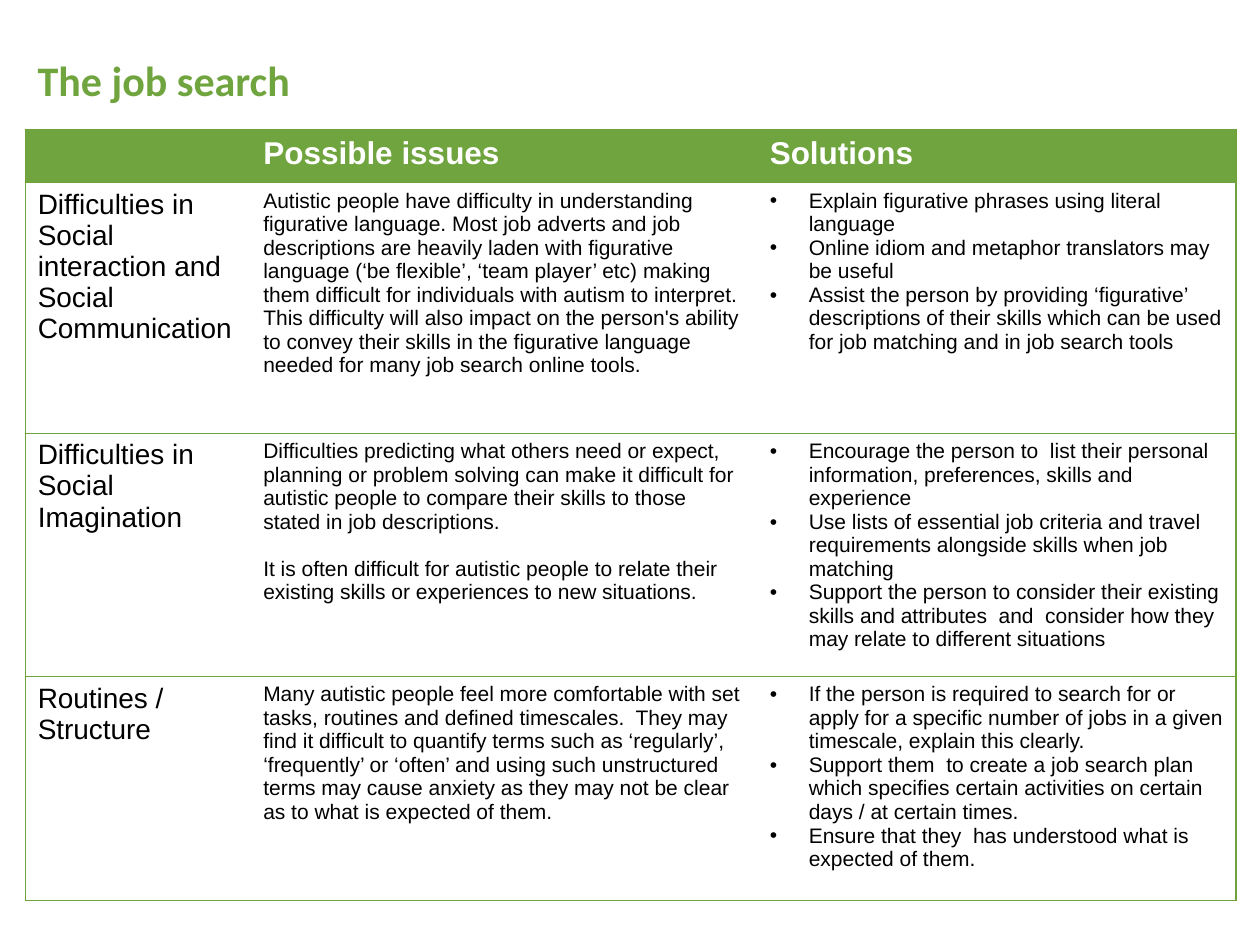
from lxml import etree
from pptx import Presentation
from pptx.dml.color import RGBColor
from pptx.enum import text
from pptx.oxml import ns
from pptx.util import Inches, Pt

GREEN = RGBColor(0x70, 0xA4, 0x3E)
EDGE = RGBColor(0x6E, 0xA2, 0x3A)
WHITE = RGBColor(0xFF, 0xFF, 0xFF)
BLACK = RGBColor(0, 0, 0)

COLS = [1.79, 4.02, 3.8]
ROWS = [0.42, 1.99, 1.93, 1.78]
HEADS = ["", "Possible issues", "Solutions"]

# One entry per row: topic, issues, solutions
TOPICS = [
    ("Difficulties in Social interaction and Social Communication",
     ["Autistic people have difficulty in understanding figurative language. "
      "Most job adverts and job descriptions are heavily laden with figurative "
      "language (‘be flexible’, ‘team player’ etc) making them difficult for "
      "individuals with autism to interpret.  This difficulty will also impact "
      "on the person's ability to convey their skills in the figurative "
      "language needed for many job search online tools."],
     ["Explain figurative phrases using literal language",
      "Online idiom and metaphor translators may be useful",
      "Assist the person by providing ‘figurative’ descriptions of their "
      "skills which can be used for job matching and in job search tools"]),
    ("Difficulties in Social Imagination",
     ["Difficulties predicting what others need or expect, planning or problem "
      "solving can make it difficult for autistic people to compare their "
      "skills to those stated in job descriptions.",
      "It is often difficult for autistic people to relate their existing "
      "skills or experiences to new situations."],
     ["Encourage the person to  list their personal information, preferences, "
      "skills and experience",
      "Use lists of essential job criteria and travel requirements alongside "
      "skills when job matching",
      "Support the person to consider their existing skills and attributes  "
      "and  consider how they may relate to different situations"]),
    ("Routines / Structure",
     ["Many autistic people feel more comfortable with set tasks, routines and "
      "defined timescales.  They may find it difficult to quantify terms such "
      "as ‘regularly’, ‘frequently’ or ‘often’ and using such unstructured "
      "terms may cause anxiety as they may not be clear as to what is expected "
      "of them."],
     ["If the person is required to search for or apply for a specific number "
      "of jobs in a given timescale, explain this clearly.",
      "Support them  to create a job search plan which specifies certain "
      "activities on certain days / at certain times.",
      "Ensure that they  has understood what is expected of them."]),
]


def add_run(para, words, size, color, bold=False, face="Arial"):
    run = para.add_run()
    run.text = words
    font = run.font
    font.name, font.size, font.bold = face, Pt(size), bold
    font.color.rgb = color


def add_bullet(para):
    props = para._p.get_or_add_pPr()
    props.set("marL", str(Inches(0.31)))
    props.set("indent", str(-Inches(0.31)))
    etree.SubElement(props, ns.qn("a:buFont")).set("typeface", "Arial")
    etree.SubElement(props, ns.qn("a:buChar")).set("char", "•")


def set_edges(cell, sides):
    """Draw the named sides in green and hide the others."""
    props = cell._tc.get_or_add_tcPr()
    for spot, side in enumerate("LRTB"):
        line = etree.Element(ns.qn("a:ln" + side), w=str(Pt(0.75)))
        if side in sides:
            fill = etree.SubElement(line, ns.qn("a:solidFill"))
            etree.SubElement(fill, ns.qn("a:srgbClr")).set("val", str(EDGE))
        else:
            etree.SubElement(line, ns.qn("a:noFill"))
        props.insert(spot, line)


def fill_cell(cell, paras, size, color, bold=False, bullets=False):
    frame = cell.text_frame
    for i, words in enumerate(paras):
        para = frame.add_paragraph() if i else frame.paragraphs[0]
        if bullets:
            add_bullet(para)
        elif i:
            para.space_before = Pt(13.5)
        add_run(para, words, size, color, bold)


def add_title(slide, left, top, width, height):
    frame = slide.shapes.add_textbox(left, top, width, height).text_frame
    frame.word_wrap = True
    frame.vertical_anchor = text.MSO_ANCHOR.MIDDLE
    add_run(frame.paragraphs[0], "The job search", 24, GREEN, True, "Calibri")


def add_grid(slide, left, top, width, height):
    table = slide.shapes.add_table(
        len(ROWS), len(COLS), left, top, width, height).table
    table.first_row = table.horz_banding = False
    for col, size in zip(table.columns, COLS):
        col.width = Inches(size)
    for row, size in zip(table.rows, ROWS):
        row.height = Inches(size)

    # Fills and outer borders, with rules between rows only
    last = len(COLS) - 1
    for r, row in enumerate(table.rows):
        for c, cell in enumerate(row.cells):
            cell.fill.solid()
            cell.fill.fore_color.rgb = WHITE if r else GREEN
            set_edges(cell, "TB" + "L" * (c == 0) + "R" * (c == last))

    # Header row
    for c, head in enumerate(HEADS):
        if head:
            fill_cell(table.cell(0, c), [head], 18, WHITE, bold=True)

    # Topic rows
    for r, (topic, issues, answers) in enumerate(TOPICS, 1):
        fill_cell(table.cell(r, 0), [topic], 16, BLACK)
        fill_cell(table.cell(r, 1), issues, 12, BLACK)
        fill_cell(table.cell(r, 2), answers, 12, BLACK, bullets=True)


def main():
    deck = Presentation()
    deck.slide_width, deck.slide_height = Inches(10), Inches(7.5)
    slide = deck.slides.add_slide(deck.slide_layouts[6])
    add_title(slide, Inches(0.2), Inches(0.01), Inches(9.31), Inches(1.25))
    add_grid(slide, Inches(0.2), Inches(1.03),
             Inches(sum(COLS)), Inches(sum(ROWS)))
    deck.save("out.pptx")


if __name__ == "__main__":
    main()
